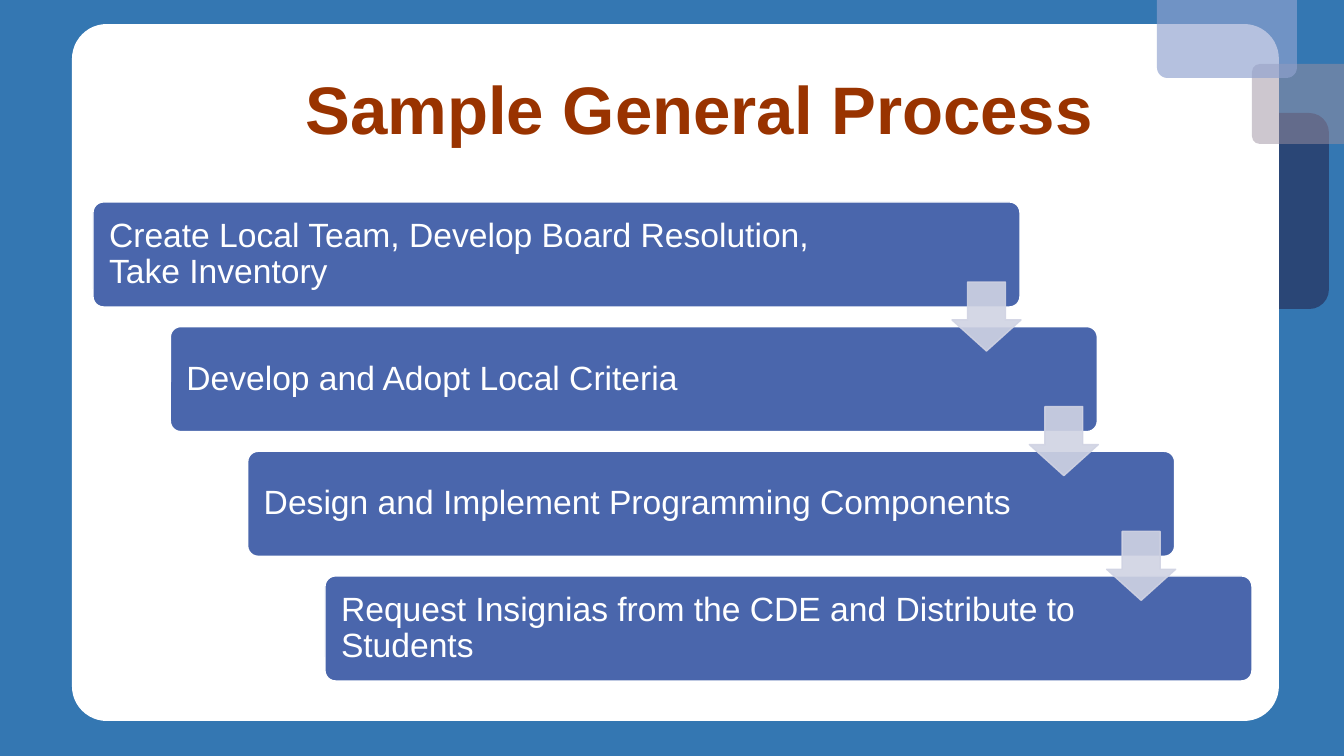
import pptx
import pptx.util
import pptx.dml.color
import pptx.enum.shapes
import pptx.enum.text
import pptx.oxml.ns
import lxml.etree
from dataclasses import dataclass

TITLE = "Sample General Process"
STEPS = [
    "Create Local Team, Develop Board Resolution, Take Inventory",
    "Develop and Adopt Local Criteria",
    "Design and Implement Programming Components",
    "Request Insignias from the CDE and Distribute to Students",
]


@dataclass(frozen=True)
class Theme:
    font: str = "Arial"
    back: str = "3477B2"
    card: str = "FFFFFF"
    navy: str = "242852"
    mauve: str = "9D90A0"
    pale: str = "90A2CF"
    title: str = "993300"
    step: str = "4A66AC"
    arrow: str = "D0D3E3"
    text: str = "FFFFFF"
    big: int = 48
    body: int = 24


theme = Theme()
FRAME = [
    ((1105, 113, 224, 196), 0.1, theme.navy, 62),
    ((72, 24, 1207, 697), 0.05, theme.card, 100),
    ((1252, 64, 224, 80), 0.1, theme.mauve, 50),
    ((1157, -53, 140, 131), 0.08, theme.pale, 66),
]
HEAD = (148, 40, 1103, 146)
FIRST = (93, 202)
LAST = (325, 576)
SIZE = (927, 105)
ARROW = (859, 80)
SIDE = 69
PAD = 13
WRAP = 130

KIND = pptx.enum.shapes.MSO_SHAPE
ALIGN = pptx.enum.text.PP_ALIGN
MIDDLE = pptx.enum.text.MSO_ANCHOR.MIDDLE


def px(n):
    return round(n * 12192000 / 1344)


def rgb(code):
    return pptx.dml.color.RGBColor.from_string(code)


def paint(fill, color, alpha=100):
    fill.solid()
    fill.fore_color.rgb = rgb(color)
    if alpha < 100:
        node = fill.fore_color._xFill.find(pptx.oxml.ns.qn("a:srgbClr"))
        lxml.etree.SubElement(node, pptx.oxml.ns.qn("a:alpha")).set("val", str(alpha * 1000))


def draw(kind, box, adjust, color, alpha=100, edge=None):
    shape = slide.shapes.add_shape(kind, *map(px, box))
    shape.shadow.inherit = False
    for i, value in enumerate(adjust):
        shape.adjustments[i] = value
    paint(shape.fill, color, alpha)
    if edge:
        paint(shape.line.fill, edge, alpha)
        shape.line.width = pptx.util.Pt(1)
    else:
        shape.line.fill.background()
    return shape


def write(shape, text, size, color, align, bold, pads):
    frame = shape.text_frame
    frame.text = text
    frame.word_wrap = True
    frame.auto_size = pptx.enum.text.MSO_AUTO_SIZE.NONE
    frame.vertical_anchor = MIDDLE
    (frame.margin_left, frame.margin_top,
     frame.margin_right, frame.margin_bottom) = map(px, pads)
    para = frame.paragraphs[0]
    para.alignment = align
    para.line_spacing = 0.9
    font = para.runs[0].font
    font.name = theme.font
    font.size = pptx.util.Pt(size)
    font.bold = bold
    font.color.rgb = rgb(color)


deck = pptx.Presentation()
deck.slide_width = px(1344)
deck.slide_height = px(756)
slide = deck.slides.add_slide(deck.slide_layouts[5])
paint(slide.background.fill, theme.back)

for box, bend, color, alpha in FRAME:
    draw(KIND.ROUNDED_RECTANGLE, box, [bend], color, alpha)

title = slide.shapes.title
title.left, title.top, title.width, title.height = map(px, HEAD)
write(title, TITLE, theme.big, theme.title, ALIGN.CENTER, True, (10, 5, 10, 5))
title.element.getparent().append(title.element)

gaps = len(STEPS) - 1
spots = [
    tuple(a + (b - a) * i / gaps for a, b in zip(FIRST, LAST))
    for i in range(len(STEPS))
]
for text, spot in zip(STEPS, spots):
    step = draw(KIND.ROUNDED_RECTANGLE, spot + SIZE, [0.1], theme.step, edge=theme.card)
    write(step, text, theme.body, theme.text, ALIGN.LEFT, False, (PAD, PAD, WRAP, PAD))

for x, y in spots[:-1]:
    box = (x + ARROW[0], y + ARROW[1], SIDE, SIDE)
    draw(KIND.DOWN_ARROW, box, [0.55, 0.45], theme.arrow, 90, theme.arrow)

deck.save("out.pptx")
